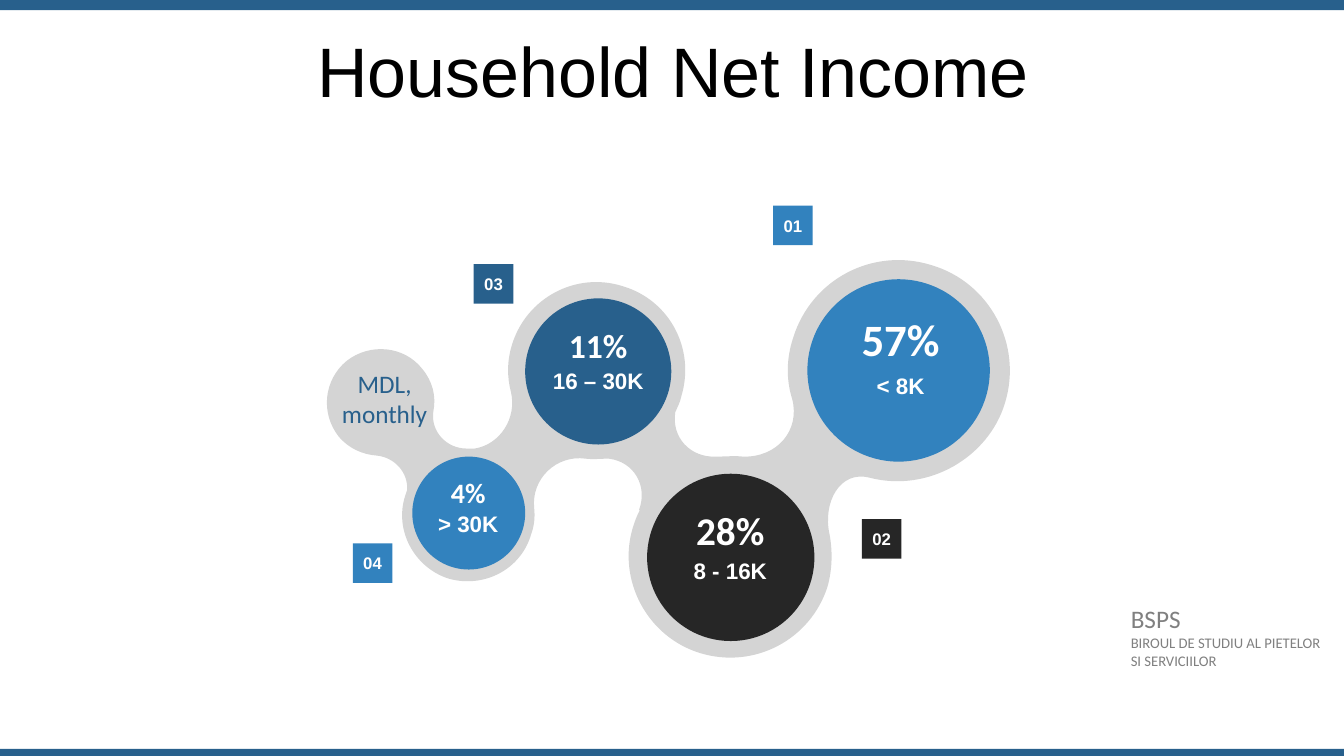
from pptx import Presentation
from pptx.dml.color import RGBColor
from pptx.enum.shapes import MSO_SHAPE
from pptx.enum.text import MSO_ANCHOR, PP_ALIGN
from pptx.oxml.ns import qn
from pptx.util import Pt

RECTANGLE, OVAL = MSO_SHAPE.RECTANGLE, MSO_SHAPE.OVAL
TOP, MIDDLE = MSO_ANCHOR.TOP, MSO_ANCHOR.MIDDLE
CENTER, JUSTIFY = PP_ALIGN.CENTER, PP_ALIGN.JUSTIFY
COLORS = {
    "navy": "28608C", "blue": "3282BE", "dark": "262626", "band": "D4D4D4",
    "white": "FFFFFF", "black": "000000", "gray": "808080",
}
POINTS_PER_INCH = 72

presentation = Presentation()
presentation.slide_width, presentation.slide_height = Pt(960), Pt(540)
slide = presentation.slides.add_slide(presentation.slide_layouts[6])


def paint(shape, color):
    """Give a shape a flat fill without line or shadow."""
    shape.shadow.inherit = False
    shape.fill.solid()
    shape.fill.fore_color.rgb = RGBColor.from_string(COLORS[color])
    shape.line.fill.background()


def write(shape, lines, font, color, bold=False, align=CENTER, anchor=TOP):
    """Fill a shape with (text, size) lines, one paragraph each."""
    frame = shape.text_frame
    frame.word_wrap = True
    frame.vertical_anchor = anchor
    frame.text = "\n".join(text for text, size in lines)
    for paragraph, (text, size) in zip(frame.paragraphs, lines):
        paragraph.alignment = align
        run_font = paragraph.runs[0].font
        run_font.name, run_font.size, run_font.bold = font, Pt(size), bold
        run_font.color.rgb = RGBColor.from_string(COLORS[color])
    return frame


# Bars and title
for top, height in [(0, 7.2), (534.96, 5.04)]:
    paint(slide.shapes.add_shape(RECTANGLE, 0, Pt(top), Pt(960), Pt(height)), "navy")

title = slide.shapes.add_textbox(Pt(25.2), Pt(26.64), Pt(911.52), Pt(56.88))
title_frame = write(title, [("Household Net Income", 50)], "Arial", "black", anchor=MIDDLE)
title_frame.paragraphs[0].line_spacing = 0.8
title_frame.paragraphs[0].space_before = Pt(10)

# Band around the circles: Bezier curves in inches (two controls, then the end)
band_start = (9.97, 4)
band_curves = [
    (9.81, 4.53, 9.22, 4.89, 8.63, 4.74), (8.33, 4.66, 8.16, 4.99, 8.23, 5.3),
    (8.26, 5.46, 8.26, 5.64, 8.21, 5.82), (8.04, 6.35, 7.48, 6.64, 6.95, 6.48),
    (6.42, 6.32, 6.12, 5.75, 6.28, 5.23), (6.3, 5.17, 6.32, 5.11, 6.35, 5.06),
    (6.34, 5.06, 6.34, 5.06, 6.34, 5.06),
    (6.43, 4.82, 6.29, 4.58, 6.04, 4.55), (5.95, 4.55, 5.89, 4.56, 5.81, 4.55),
    (5.81, 4.55, 5.81, 4.55, 5.81, 4.55),
    (5.52, 4.51, 5.27, 4.75, 5.3, 5.04), (5.31, 5.13, 5.3, 5.22, 5.27, 5.3),
    (5.17, 5.65, 4.8, 5.84, 4.45, 5.74), (4.11, 5.63, 3.91, 5.26, 4.02, 4.92),
    (4.03, 4.9, 4.03, 4.88, 4.04, 4.86), (4.05, 4.69, 3.92, 4.54, 3.74, 4.52),
    (3.74, 4.52, 3.74, 4.52, 3.74, 4.52),
    (3.6, 4.51, 3.46, 4.45, 3.36, 4.33), (3.18, 4.1, 3.21, 3.77, 3.44, 3.58),
    (3.67, 3.4, 4.01, 3.43, 4.19, 3.66), (4.29, 3.78, 4.33, 3.93, 4.3, 4.08),
    (4.3, 4.08, 4.3, 4.08, 4.3, 4.08),
    (4.27, 4.28, 4.43, 4.45, 4.63, 4.45), (4.63, 4.45, 4.63, 4.45, 4.63, 4.45),
    (4.65, 4.45, 4.68, 4.45, 4.71, 4.45),
    (4.96, 4.41, 5.13, 4.15, 5.07, 3.89), (5.03, 3.74, 5.03, 3.58, 5.08, 3.42),
    (5.22, 2.96, 5.71, 2.69, 6.18, 2.84), (6.65, 2.98, 6.9, 3.47, 6.76, 3.93),
    (6.75, 3.99, 6.72, 4.04, 6.7, 4.09), (6.66, 4.34, 6.85, 4.54, 7.1, 4.53),
    (7.21, 4.53, 7.29, 4.52, 7.37, 4.53), (7.71, 4.54, 7.94, 4.27, 7.86, 3.96),
    (7.8, 3.77, 7.8, 3.56, 7.87, 3.35), (8.05, 2.77, 8.66, 2.45, 9.24, 2.63),
    (9.82, 2.8, 10.15, 3.42, 9.97, 4),
]
band_points = [band_start]
for curve in band_curves:
    band_points += zip(curve[::2], curve[1::2])
band_points = [(Pt(x * POINTS_PER_INCH), Pt(y * POINTS_PER_INCH)) for x, y in band_points]
builder = slide.shapes.build_freeform(*band_points[0])
builder.add_line_segments(band_points[1:], close=True)
band = builder.convert_to_shape()
paint(band, "band")

# Join every three line segments into one Bezier curve
segments = list(band.element.iter(qn("a:lnTo")))
for first, second, third in zip(segments[::3], segments[1::3], segments[2::3]):
    first.tag = qn("a:cubicBezTo")
    for segment in (second, third):
        first.append(segment[0])
        segment.getparent().remove(segment)

# Circles: left, top, diameter, color
circles = [
    (576.72, 199.44, 130.32, "blue"), (462.24, 338.4, 119.52, "dark"),
    (375.12, 213.12, 104.4, "navy"), (294.48, 326.16, 80.64, "blue"),
]
for left, top, diameter, color in circles:
    paint(slide.shapes.add_shape(OVAL, Pt(left), Pt(top), Pt(diameter), Pt(diameter)), color)

# Circle labels: left, width, share, share size, share top, income, income top
labels = [
    (578.16, 130.32, "57%", 32, 218.88, "< 8K", 262.08),
    (461.52, 120.24, "28%", 28, 357.84, "8 - 16K", 394.56),
    (375.12, 104.4, "11%", 24, 228.24, "16 – 30K", 258.48),
    (294.48, 79.92, "4%", 20, 336.24, "> 30K", 360.72),
]
for left, width, share, share_size, share_top, income, income_top in labels:
    for text, font, size, top in [
        (share, "Calibri", share_size, share_top),
        (income, "Arial", 16, income_top),
    ]:
        label = slide.shapes.add_textbox(Pt(left), Pt(top), Pt(width), Pt(size * 1.2 + 7.2))
        write(label, [(text, size)], font, "white", bold=True)

# Numbered badges
badges = [
    ("02", 615.6, 370.8, "dark"), ("04", 252, 388.08, "blue"),
    ("03", 338.4, 188.64, "navy"), ("01", 552.24, 146.88, "blue"),
]
for number, left, top, color in badges:
    badge = slide.shapes.add_shape(RECTANGLE, Pt(left), Pt(top), Pt(28.3), Pt(28.3))
    paint(badge, color)
    frame = write(badge, [(number, 12)], "Arial", "white", bold=True, anchor=MIDDLE)
    frame.margin_left = frame.margin_right = 0

# Unit and publisher
unit = slide.shapes.add_textbox(Pt(222.48), Pt(259.2), Pt(104.4), Pt(51.12))
write(unit, [("MDL, monthly", 18)], "Calibri", "navy")

publisher = slide.shapes.add_textbox(Pt(800.64), Pt(427.68), Pt(163.44), Pt(54.72))
publisher_lines = [("BSPS", 18), ("BIROUL DE STUDIU AL PIETELOR", 10.5), ("SI SERVICIILOR", 10.5)]
write(publisher, publisher_lines, "Calibri", "gray", align=JUSTIFY)

presentation.save("out.pptx")
